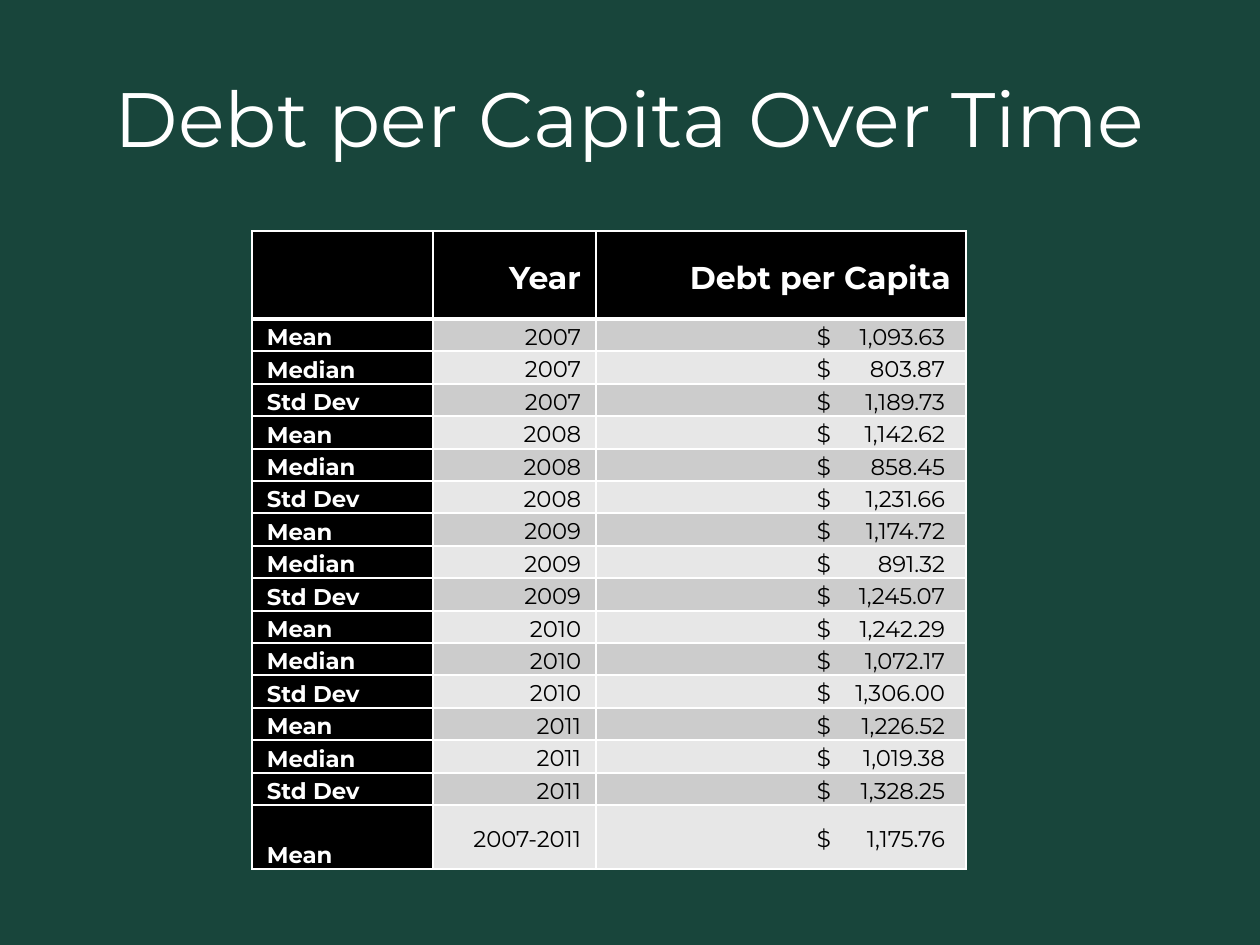
import pptx
import pptx.dml.color
import pptx.enum.text
import pptx.oxml.ns
import pptx.util
from lxml import etree

EMU_PER_PX = 914400 // 126
FONT = "Montserrat"
COLORS = {
    "background": "18453B",
    "light": "FFFFFF",
    "dark": "000000",
    "band_odd": "CCCCCC",
    "band_even": "E7E7E7",
}
ALIGN = pptx.enum.text.PP_ALIGN
ANCHOR = pptx.enum.text.MSO_ANCHOR

COLUMN_WIDTHS = (181, 163, 370)
HEADER_HEIGHT, BODY_HEIGHT, LAST_HEIGHT = 88, 486, 64
CELL_INSET = 15
DOLLAR_TAB, AMOUNT_TAB = 206, 334  # from the cell's inner left edge

HEADERS = ("", "Year", "Debt per Capita")
STATISTICS = ("Mean", "Median", "Std Dev")
AMOUNTS = {
    "2007": ("1,093.63", "803.87", "1,189.73"),
    "2008": ("1,142.62", "858.45", "1,231.66"),
    "2009": ("1,174.72", "891.32", "1,245.07"),
    "2010": ("1,242.29", "1,072.17", "1,306.00"),
    "2011": ("1,226.52", "1,019.38", "1,328.25"),
    "2007-2011": ("1,175.76",),
}


def px(length):
    return pptx.util.Emu(length * EMU_PER_PX)


def rgb(name):
    return pptx.dml.color.RGBColor.from_string(COLORS[name])


def add_span(para, text, size, color, bold=False):
    span = para.add_run()
    span.text = text
    span.font.name = FONT
    span.font.size = pptx.util.Pt(size)
    span.font.bold = bold
    span.font.color.rgb = rgb(color)


def add_title(page, text):
    title = page.shapes.title
    title.left, title.top, title.width, title.height = map(px, (63, 38, 1134, 157))
    title.text_frame.vertical_anchor = ANCHOR.MIDDLE
    para = title.text_frame.paragraphs[0]
    para.alignment = ALIGN.CENTER
    add_span(para, text, 44, "light")


def add_child(parent, tag, **attributes):
    return etree.SubElement(parent, pptx.oxml.ns.qn(tag), attributes)


def set_borders(cell, top=1, bottom=1):
    properties = cell._tc.get_or_add_tcPr()
    for side, points in (("L", 1), ("R", 1), ("T", top), ("B", bottom)):
        line = add_child(properties, f"a:ln{side}", w=str(pptx.util.Pt(points)))
        fill = add_child(line, "a:solidFill")
        add_child(fill, "a:srgbClr", val=COLORS["light"])


def set_amount_tabs(para):
    tabs = add_child(para._p.get_or_add_pPr(), "a:tabLst")
    for position, side in ((DOLLAR_TAB, "l"), (AMOUNT_TAB, "r")):
        add_child(tabs, "a:tab", pos=str(px(position)), algn=side)


def fill_cell(cell, text, fill, color, size=13, bold=False,
              align=ALIGN.RIGHT, anchor=ANCHOR.MIDDLE):
    cell.fill.solid()
    cell.fill.fore_color.rgb = rgb(fill)
    cell.vertical_anchor = anchor
    cell.margin_left = cell.margin_right = px(CELL_INSET)
    cell.margin_top = cell.margin_bottom = 0
    para = cell.text_frame.paragraphs[0]
    para.alignment = align
    para.line_spacing = 1.15
    if text:
        add_span(para, text, size, color, bold)
    return para


def row_heights(body_count):
    edges = [round(BODY_HEIGHT * i / body_count) for i in range(body_count + 1)]
    body = [low - high for high, low in zip(edges, edges[1:])]
    return [HEADER_HEIGHT, *body, LAST_HEIGHT]


def add_debt_table(page):
    records = [
        (statistic, year, amount)
        for year, amounts in AMOUNTS.items()
        for statistic, amount in zip(STATISTICS, amounts)
    ]
    heights = row_heights(len(records) - 1)
    table = page.shapes.add_table(
        len(heights), len(COLUMN_WIDTHS), px(252), px(231),
        px(sum(COLUMN_WIDTHS)), px(sum(heights)),
    ).table
    for column, width in zip(table.columns, COLUMN_WIDTHS):
        column.width = px(width)
    for row, height in zip(table.rows, heights):
        row.height = px(height)

    # Header row with a heavier rule below it
    for cell, text in zip(table.rows[0].cells, HEADERS):
        set_borders(cell, bottom=3)
        fill_cell(cell, text, "dark", "light", size=18, bold=True)

    # One row per statistic, in alternating bands
    for index, (statistic, year, amount) in enumerate(records, start=1):
        cells = list(table.rows[index].cells)
        for cell in cells:
            set_borders(cell, top=3 if index == 1 else 1)
        band = "band_odd" if index % 2 else "band_even"
        fill_cell(cells[0], statistic, "dark", "light", bold=True,
                  align=ALIGN.LEFT, anchor=ANCHOR.BOTTOM)
        fill_cell(cells[1], year, band, "dark")
        para = fill_cell(cells[2], f"\t$\t{amount}", band, "dark", align=ALIGN.LEFT)
        set_amount_tabs(para)


def main():
    deck = pptx.Presentation()
    deck.slide_width, deck.slide_height = px(1260), px(945)
    page = deck.slides.add_slide(deck.slide_layouts[5])
    page.background.fill.solid()
    page.background.fill.fore_color.rgb = rgb("background")
    add_title(page, "Debt per Capita Over Time")
    add_debt_table(page)
    deck.save("out.pptx")


if __name__ == "__main__":
    main()
